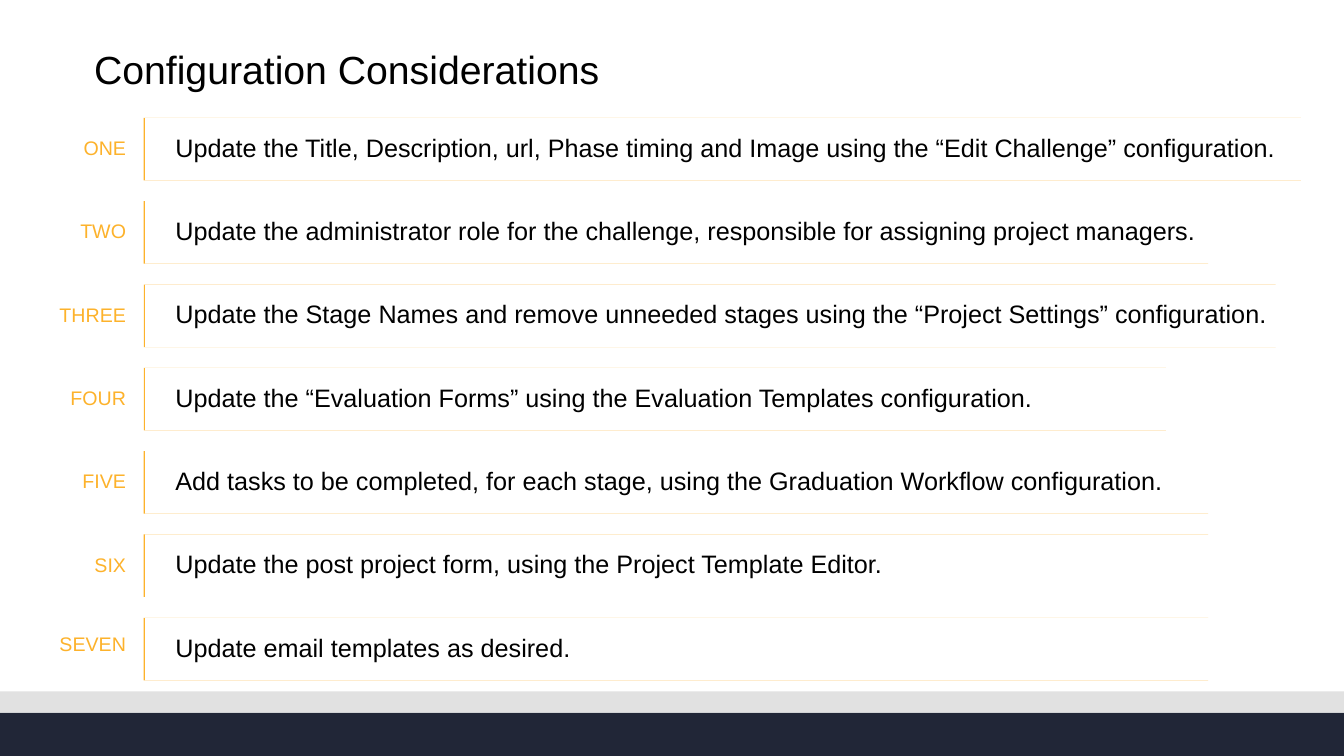
from lxml import etree
from pptx import Presentation, util as u
from pptx.dml.color import RGBColor
from pptx.enum import shapes, text as t
from pptx.oxml import ns

GOLD, BLACK, WHITE = "FDB22B", "000000", "FFFFFF"
STEPS = [  # label, text, width of the card
    ("ONE", "Update the Title, Description, url, Phase timing and Image "
            "using the “Edit Challenge” configuration.", 86.1),
    ("TWO", "Update the administrator role for the challenge, "
            "responsible for assigning project managers.", 79.2),
    ("THREE", "Update the Stage Names and remove unneeded stages "
              "using the “Project Settings” configuration.", 84.22),
    ("FOUR", "Update the “Evaluation Forms” using the Evaluation "
             "Templates configuration.", 76.05),
    ("FIVE", "Add tasks to be completed, for each stage, "
             "using the Graduation Workflow configuration.", 79.2),
    ("SIX", "Update the post project form, using the Project Template Editor.", 79.2),
    ("SEVEN", "Update email templates as desired.", 79.2),
]

deck = Presentation()
deck.slide_width, deck.slide_height = u.Inches(13.33), u.Inches(7.5)
slide = deck.slides.add_slide(deck.slide_layouts[6])


def paint(fmt, color):
    fmt.solid()
    fmt.fore_color.rgb = RGBColor.from_string(color)


def place(x, y, w, h):
    """Turn percentages of the slide into lengths."""
    wide, high = deck.slide_width / 100, deck.slide_height / 100
    return [round(n) for n in (x * wide, y * high, w * wide, h * high)]


def block(box, color):
    rect = slide.shapes.add_shape(shapes.MSO_SHAPE.RECTANGLE, *place(*box))
    paint(rect.fill, color)
    rect.line.fill.background()
    rect.shadow.inherit = False
    return rect


def write(shape, words, size, color, align=t.PP_ALIGN.LEFT,
          anchor=t.MSO_ANCHOR.MIDDLE, inset=0, wrap=True):
    frame = shape.text_frame
    frame.text = words
    frame.word_wrap, frame.vertical_anchor = wrap, anchor
    frame.margin_left = u.Inches(inset)
    frame.margin_right = frame.margin_top = frame.margin_bottom = 0
    para = frame.paragraphs[0]
    para.alignment, para.line_spacing = align, 0.9
    font = para.runs[0].font
    font.name, font.size = "Arial", u.Pt(size)
    font.color.rgb = RGBColor.from_string(color)


def edge(shape, color):
    """Add a hard shadow one point to the left."""
    effects = shape._element.spPr.find(ns.qn("a:effectLst"))
    shade = etree.SubElement(effects, ns.qn("a:outerShdw"), blurRad="0",
                             dist=str(u.Pt(1)), dir="10800000",
                             algn="r", rotWithShape="0")
    etree.SubElement(shade, ns.qn("a:srgbClr"), val=color)


def footer(x, y, w, h):
    band = 0.33 * h
    block((x, y, w, band), "E1E1E1")
    block((x, y + band, w, h - band), "212637")


def title(*box):
    write(slide.shapes.add_textbox(*place(*box)), "Configuration Considerations",
          28, BLACK, anchor=t.MSO_ANCHOR.TOP)


def step(x, y, w, h, label, words, drop):
    card = block((x, y, w, h), WHITE)
    edge(card, GOLD)
    write(card, words, 18, BLACK, inset=0.3, wrap=False)
    tag = slide.shapes.add_textbox(*place(x - 15.15, y + drop, 13.73, 4.8))
    write(tag, label, 14, GOLD, align=t.PP_ALIGN.RIGHT)


def steps(x, y, pitch, h):
    for i, (label, words, w) in enumerate(STEPS):
        drop = 1.2 if label == "SEVEN" else 1.75  # the last label sits higher
        step(x, y + i * pitch, w, h, label, words, drop)


footer(0, 91.47, 100, 8.53)
title(7, 6.67, 80.93, 15.47)
steps(10.8, 15.6, 11.02, 8.27)
deck.save("out.pptx")
